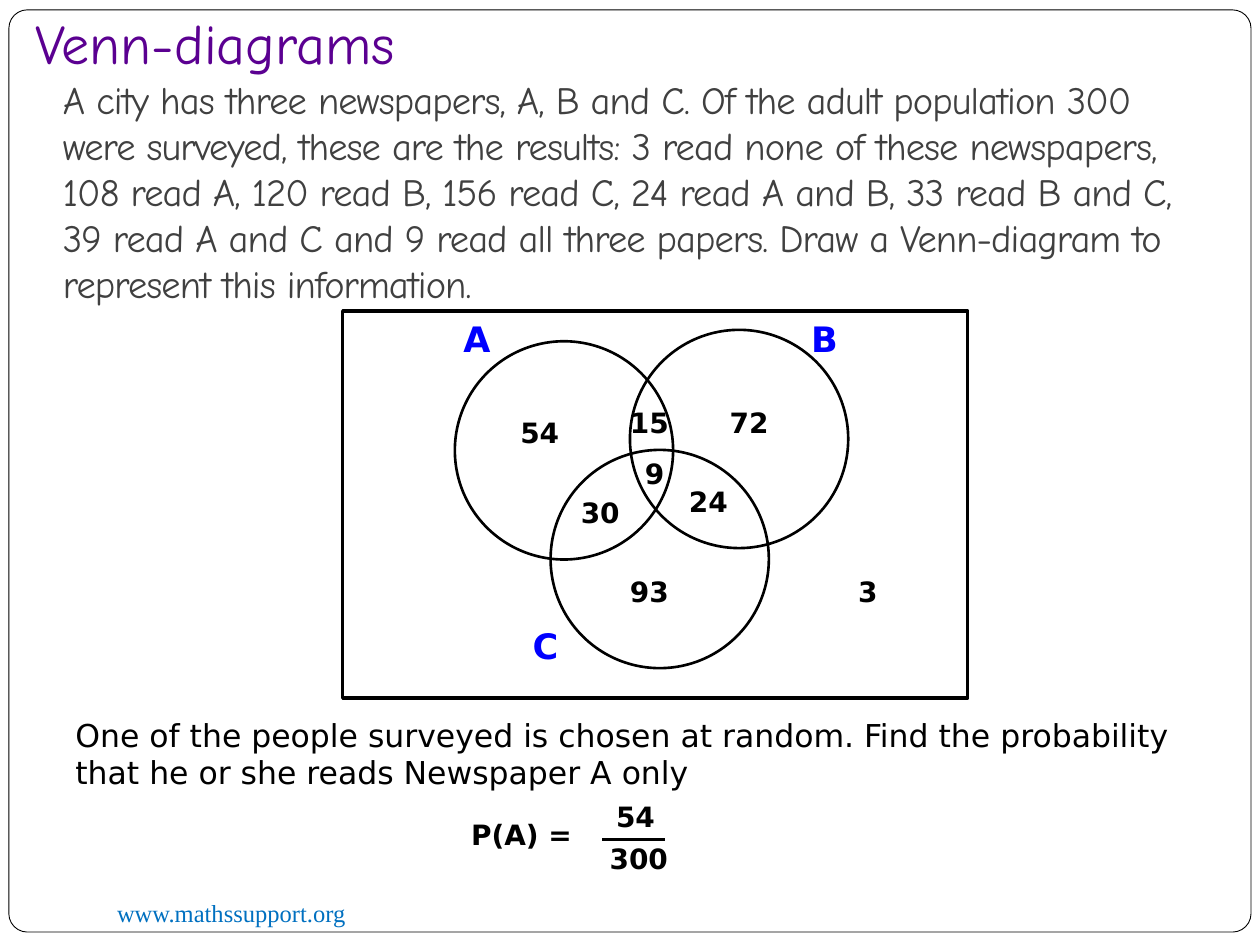
from lxml import etree
from pptx import Presentation
from pptx.dml.color import RGBColor
from pptx.enum.shapes import MSO_CONNECTOR, MSO_SHAPE
from pptx.enum.text import MSO_ANCHOR
from pptx.oxml.ns import qn
from pptx.util import Cm, Pt

RECT, OVAL, ROUNDED = MSO_SHAPE.RECTANGLE, MSO_SHAPE.OVAL, MSO_SHAPE.ROUNDED_RECTANGLE
STRAIGHT = MSO_CONNECTOR.STRAIGHT
TOP, MIDDLE = MSO_ANCHOR.TOP, MSO_ANCHOR.MIDDLE

BLACK = RGBColor(0x00, 0x00, 0x00)
WHITE = RGBColor(0xFF, 0xFF, 0xFF)
BLUE = RGBColor(0x00, 0x00, 0xFF)
LINK_BLUE = RGBColor(0x00, 0x70, 0xC0)
PURPLE = RGBColor(0x5B, 0x00, 0x91)
GREY = RGBColor(0x40, 0x40, 0x40)

COMIC, SANS, SERIF = "Comic Neue", "DejaVu Sans", "Times New Roman"
CIRCLE = 4.4  # diameter of each set, cm

PROBLEM = (
    "A city has three newspapers, A, B and C. Of the adult population 300 were "
    "surveyed, these are the results: 3 read none of these newspapers, 108 read A, "
    "120 read B, 156 read C, 24 read A and B, 33 read B and C, 39 read A and C and "
    "9 read all three papers. Draw a Venn-diagram to represent this information."
)
QUESTION = (
    "One of the people surveyed is chosen at random. Find the probability "
    "that he or she reads Newspaper A only"
)

# Set name: circle left, top, label left, top
SETS = {
    "A": (9.17, 6.88, 9.09, 6.27),
    "B": (12.7, 6.65, 16.1, 6.27),
    "C": (11.1, 9.07, 10.49, 12.47),
}

# Number of readers in each region: text, left, top
COUNTS = [
    ("9", 13.0, 9.07),
    ("30", 11.71, 9.86),
    ("24", 13.89, 9.65),
    ("15", 12.7, 8.05),
    ("93", 12.7, 11.46),
    ("72", 14.71, 8.05),
    ("54", 10.49, 8.26),
    ("3", 17.3, 11.46),
]


def add_text(s, text, x, y, w, h, *, size, color=BLACK, font=SANS, bold=False,
             wrap=True, side=0.25, anchor=TOP, spacing=None):
    sp = s.shapes.add_textbox(Cm(x), Cm(y), Cm(w), Cm(h))
    tf = sp.text_frame
    tf.word_wrap = wrap
    tf.vertical_anchor = anchor
    tf.margin_left = tf.margin_right = Cm(side)
    r = tf.paragraphs[0].add_run()
    r.text = text
    r.font.size = Pt(size)
    r.font.name = font
    r.font.bold = bold
    r.font.color.rgb = color
    if spacing is not None:
        r.font._element.set("spc", str(round(spacing * 100)))


def add_number(s, text, x, y, w=1.0):
    add_text(s, text, x, y, w, 0.94, size=16, bold=True, side=0)


def add_outline(s, kind, x, y, w, h, line_width, fill=None):
    sp = s.shapes.add_shape(kind, Cm(x), Cm(y), Cm(w), Cm(h))
    sp.shadow.inherit = False
    if fill is None:
        sp.fill.background()
    else:
        sp.fill.solid()
        sp.fill.fore_color.rgb = fill
    sp.line.color.rgb = BLACK
    sp.line.width = Pt(line_width)
    return sp


def add_line(s, x1, y1, x2, y2, line_width):
    line = s.shapes.add_connector(STRAIGHT, Cm(x1), Cm(y1), Cm(x2), Cm(y2))
    line.line.color.rgb = BLACK
    line.line.width = Pt(line_width)
    etree.SubElement(line._element.spPr, qn("a:effectLst"))


def add_venn(s):
    add_outline(s, RECT, 6.91, 6.27, 12.6, 7.8, 2)
    for name, (x, y, label_x, label_y) in SETS.items():
        add_outline(s, OVAL, x, y, CIRCLE, CIRCLE, 1.5)
        add_text(s, name, label_x, label_y, 1.07, 1.12, size=20, color=BLUE,
                 bold=True, wrap=False)
    for text, x, y in COUNTS:
        add_number(s, text, x, y)


def add_answer(s):
    add_number(s, "P(A) =", 9.5, 16.36, 2.57)
    add_number(s, "54", 12.42, 16.0)
    add_number(s, "300", 12.29, 16.84, 1.6)
    add_line(s, 12.14, 16.92, 13.41, 16.92, 1.75)


def main():
    prs = Presentation()
    prs.slide_width, prs.slide_height = Cm(25.4), Cm(19.05)
    s = prs.slides.add_slide(prs.slide_layouts[6])

    # Page frame and footer
    frame = add_outline(s, ROUNDED, 0.18, 0.2, 25.04, 18.59, 0.5, WHITE)
    frame.adjustments[0] = 0.02
    add_text(s, "www.mathssupport.org", 2.11, 17.98, 8.26, 0.86, size=14,
             color=LINK_BLUE, font=SERIF)

    # Title and problem
    add_text(s, "Venn-diagrams", 0.46, 0, 21.59, 1.7, size=32, color=PURPLE,
             font=COMIC, anchor=MIDDLE)
    add_text(s, PROBLEM, 1.02, 1.4, 23.6, 4.95, size=22, color=GREY,
             font=COMIC, spacing=-0.5)

    # Diagram, question and answer
    add_venn(s)
    add_text(s, QUESTION, 1.27, 14.3, 22.91, 1.8, size=18)
    add_answer(s)

    prs.save("out.pptx")


if __name__ == "__main__":
    main()
